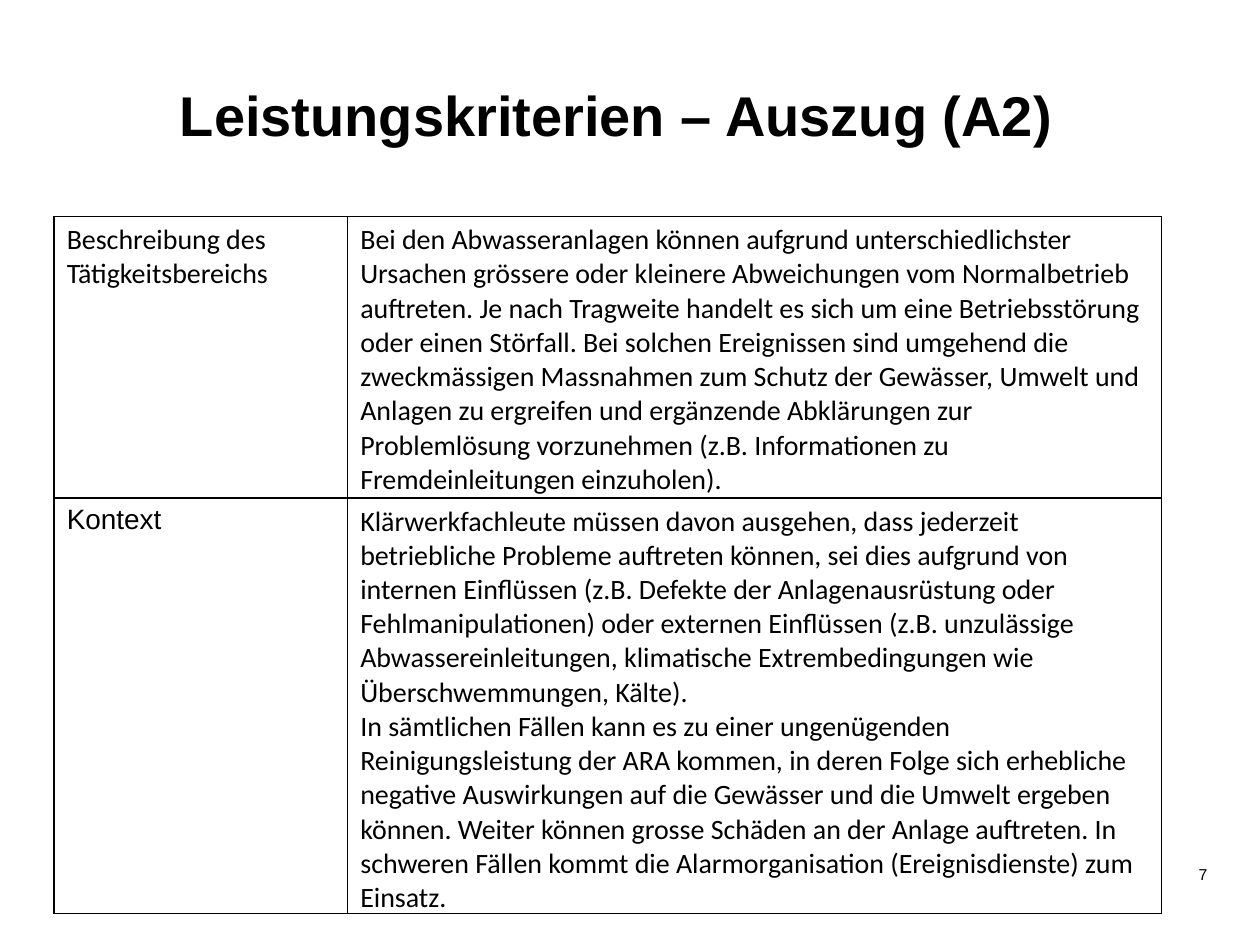
from dataclasses import dataclass

from lxml.etree import SubElement
from pptx import Presentation
from pptx.dml.color import RGBColor
from pptx.enum.text import MSO_ANCHOR, PP_ALIGN
from pptx.oxml.ns import qn
from pptx.util import Inches, Pt


@dataclass(frozen=True)
class Theme:
    ink: str = "000000"
    head_font: str = "Arial"
    body_font: str = "Calibri"
    title_size: int = 32
    body_size: int = 16
    number_size: int = 9
    border: int = 1


THEME = Theme()

# Each row: label, label font, paragraphs of the description
ROWS = [
    ("Beschreibung des Tätigkeitsbereichs", THEME.body_font, [
        "Bei den Abwasseranlagen können aufgrund unterschiedlichster Ursachen "
        "grössere oder kleinere Abweichungen vom Normalbetrieb auftreten. Je nach "
        "Tragweite handelt es sich um eine Betriebsstörung oder einen Störfall. Bei "
        "solchen Ereignissen sind umgehend die zweckmässigen Massnahmen zum Schutz "
        "der Gewässer, Umwelt und Anlagen zu ergreifen und ergänzende Abklärungen "
        "zur Problemlösung vorzunehmen (z.B. Informationen zu Fremdeinleitungen "
        "einzuholen).",
    ]),
    ("Kontext", THEME.head_font, [
        "Klärwerkfachleute müssen davon ausgehen, dass jederzeit betriebliche "
        "Probleme auftreten können, sei dies aufgrund von internen Einflüssen (z.B. "
        "Defekte der Anlagenausrüstung oder Fehlmanipulationen) oder externen "
        "Einflüssen (z.B. unzulässige Abwassereinleitungen, klimatische "
        "Extrembedingungen wie Überschwemmungen, Kälte).",
        "In sämtlichen Fällen kann es zu einer ungenügenden Reinigungsleistung der "
        "ARA kommen, in deren Folge sich erhebliche negative Auswirkungen auf die "
        "Gewässer und die Umwelt ergeben können. Weiter können grosse Schäden an der "
        "Anlage auftreten. In schweren Fällen kommt die Alarmorganisation "
        "(Ereignisdienste) zum Einsatz.",
    ]),
]


def write(tf, paragraphs, *, size, font, bold=False, align=PP_ALIGN.LEFT, spacing=None):
    tf.word_wrap = True
    for i, text in enumerate(paragraphs):
        p = tf.paragraphs[0] if i == 0 else tf.add_paragraph()
        p.alignment = align
        if spacing is not None:
            p.line_spacing = spacing
        r = p.add_run()
        r.text = text
        r.font.size = Pt(size)
        r.font.name = font
        r.font.bold = bold
        r.font.color.rgb = RGBColor.from_string(THEME.ink)


def set_borders(cell):
    tc_pr = cell._tc.get_or_add_tcPr()
    for side in ("a:lnL", "a:lnR", "a:lnT", "a:lnB"):
        ln = SubElement(tc_pr, qn(side), w=str(Pt(THEME.border)))
        fill = SubElement(ln, qn("a:solidFill"))
        SubElement(fill, qn("a:srgbClr"), val=THEME.ink)


def add_title(s, box, text):
    tf = s.shapes.add_textbox(*box).text_frame
    tf.vertical_anchor = MSO_ANCHOR.MIDDLE
    write(tf, [text], size=THEME.title_size, font=THEME.head_font, bold=True, spacing=0.9)


def add_criteria_table(s, box, rows, label_width):
    left, top, width, height = box
    table = s.shapes.add_table(len(rows), 2, left, top, width, height).table
    table.first_row = table.horz_banding = False
    table.columns[0].width = label_width
    table.columns[1].width = width - label_width
    for i, (label, label_font, description) in enumerate(rows):
        contents = (([label], label_font), (description, THEME.body_font))
        for cell, (paragraphs, font) in zip(table.rows[i].cells, contents):
            write(cell.text_frame, paragraphs, size=THEME.body_size, font=font)
            set_borders(cell)
            cell.fill.background()


def add_page_number(s, box, number):
    tf = s.shapes.add_textbox(*box).text_frame
    write(tf, [str(number)], size=THEME.number_size, font=THEME.head_font,
          align=PP_ALIGN.RIGHT, spacing=Pt(12))


def main():
    prs = Presentation()
    prs.slide_width, prs.slide_height = Inches(10), Inches(7.5)
    s = prs.slides.add_slide(prs.slide_layouts[6])

    # Title
    add_title(s, (Inches(1.33), Inches(0.55), Inches(7.92), Inches(0.78)),
              "Leistungskriterien – Auszug (A2)")

    # Criteria: rows grow with their text
    add_criteria_table(s, (Inches(0.43), Inches(1.72), Inches(8.79), Inches(0.82)),
                       ROWS, label_width=Inches(2.33))

    # Page number
    add_page_number(s, (Inches(7.24), Inches(6.8), Inches(2.44), Inches(0.4)), 7)

    prs.save("out.pptx")


if __name__ == "__main__":
    main()
